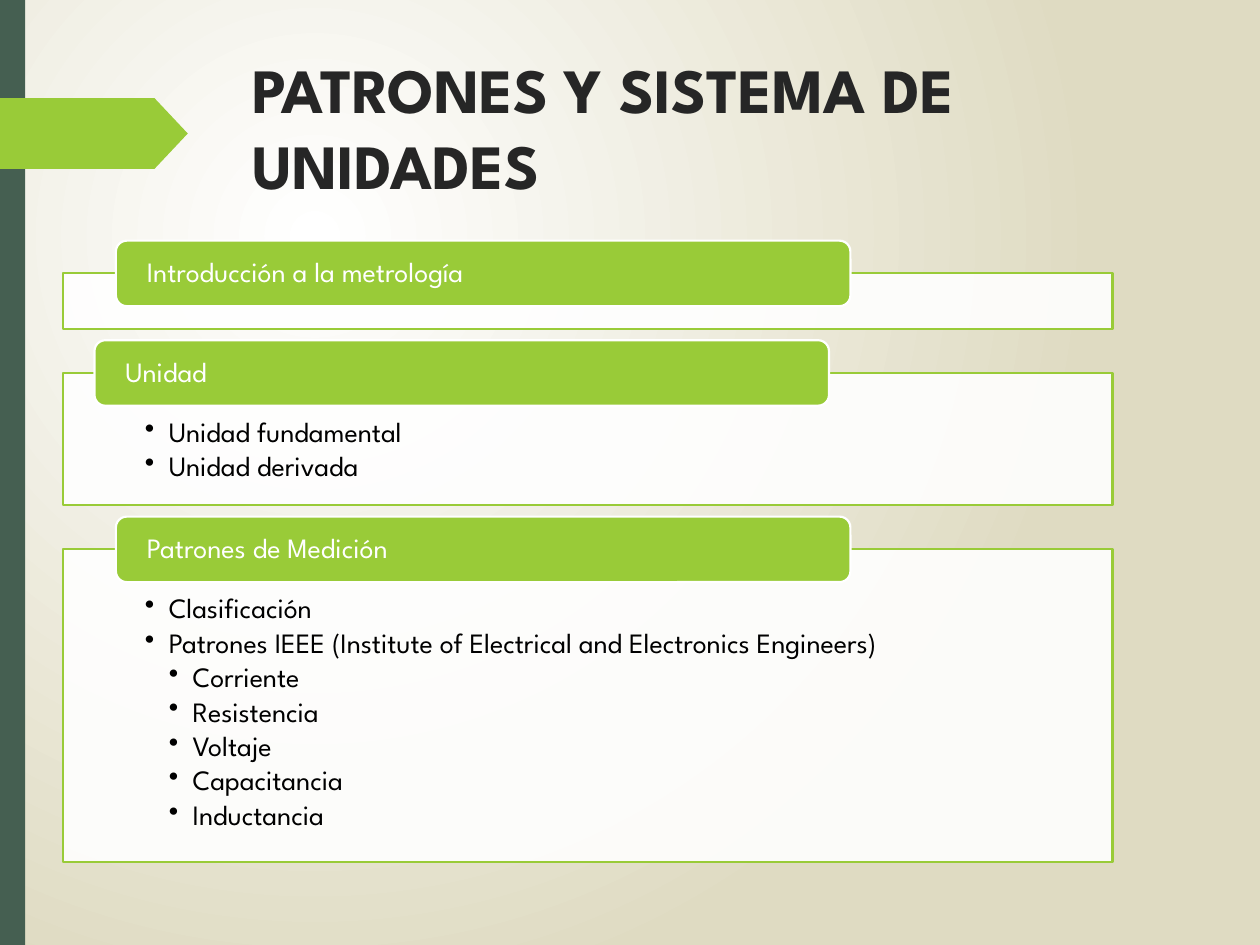
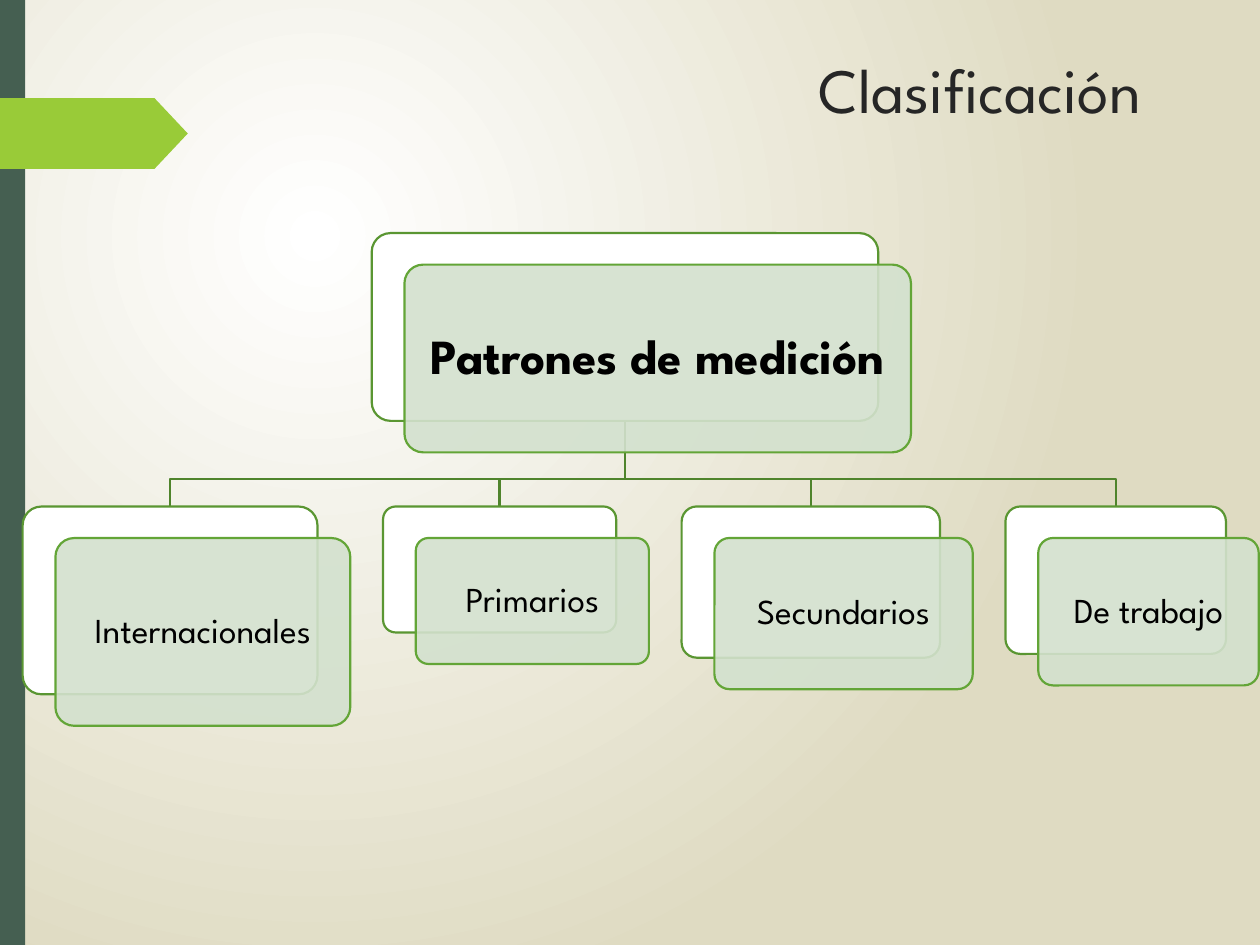
from pptx import Presentation
from pptx.dml.color import RGBColor
from pptx.enum.shapes import MSO_SHAPE as SHAPE
from pptx.enum.text import MSO_ANCHOR as ANCHOR, MSO_AUTO_SIZE as AUTO_SIZE, PP_ALIGN as ALIGN
from pptx.oxml.ns import qn
from pptx.util import Inches, Pt
from lxml import etree

FONT = "League Spartan"
LIME, DARK_GREEN, WHITE, BLACK = "99CB38", "455F51", "FFFFFF", "000000"


def paint(shape, fill=None, line=None, opacity=100):
    shape.shadow.inherit = False
    if fill:
        shape.fill.solid()
        shape.fill.fore_color.rgb = RGBColor.from_string(fill)
    else:
        shape.fill.background()
    if opacity < 100:
        tint = shape.element.spPr.find(qn("a:solidFill") + "/" + qn("a:srgbClr"))
        etree.SubElement(tint, qn("a:alpha")).set("val", str(opacity * 1000))
    if line:
        shape.line.color.rgb = RGBColor.from_string(line)
        shape.line.width = Pt(1.25)
    else:
        shape.line.fill.background()


def write(paragraph, text, size, color, align, bold=False, spacing=0.9):
    paragraph.text = text
    paragraph.alignment = align
    paragraph.line_spacing = spacing
    paragraph.font.name = FONT
    paragraph.font.size = Pt(size)
    paragraph.font.bold = bold
    paragraph.font.color.rgb = RGBColor.from_string(color)


prs = Presentation()
prs.slide_width, prs.slide_height = Inches(10), Inches(7.5)

backdrop = prs.slide_master.background.fill
backdrop.gradient()
for stop, (position, color) in zip(backdrop.gradient_stops, [(0, WHITE), (1, "DFDBC2")]):
    stop.position = position
    stop.color.rgb = RGBColor.from_string(color)
gradient = prs.slide_master.element.find(".//" + qn("p:bg") + "//" + qn("a:gradFill"))
gradient.remove(gradient.find(qn("a:lin")))
glow = etree.SubElement(gradient, qn("a:path"))
glow.set("path", "circle")
focus = etree.SubElement(glow, qn("a:fillToRect"))
for side, percent in [("l", 50), ("t", 50), ("r", 100), ("b", 100)]:
    focus.set(side, str(percent * 1000))

slides = []
for heading, left, align, bold in [
    ("PATRONES Y SISTEMA DE UNIDADES", 1.9, ALIGN.LEFT, True),
    ("Clasificación", 1.95, ALIGN.RIGHT, False),
]:
    slide = prs.slides.add_slide(prs.slide_layouts[5])
    slides.append(slide)
    side_band = slide.shapes.add_shape(SHAPE.RECTANGLE, 0, 0, Inches(0.2), prs.slide_height)
    paint(side_band, DARK_GREEN)
    pointer = slide.shapes.add_shape(SHAPE.PENTAGON, 0, Inches(0.78), Inches(1.49), Inches(0.56))
    pointer.adjustments[0] = 0.47
    paint(pointer, LIME)
    title = slide.shapes.title
    title.left, title.top, title.width, title.height = map(Inches, (left, 0.35, 7.21, 1.4))
    title.text_frame.auto_size = AUTO_SIZE.NONE
    title.text_frame.vertical_anchor = ANCHOR.TOP
    write(title.text_frame.paragraphs[0], heading, 36, "262626", align, bold, 1.0)

overview, classification = slides

topics = [
    ("Introducción a la metrología", 0.92, 0.44, []),
    ("Unidad", 0.75, 1.05, [("Unidad fundamental", 1), ("Unidad derivada", 1)]),
    ("Patrones de Medición", 0.92, 2.48, [
        ("Clasificación", 1),
        ("Patrones IEEE (Institute of Electrical and Electronics Engineers)", 1),
        ("Corriente", 2),
        ("Resistencia", 2),
        ("Voltaje", 2),
        ("Capacitancia", 2),
        ("Inductancia", 2),
    ]),
]
panel_top = 2.17
for topic, tab_left, panel_height, points in topics:
    panel = overview.shapes.add_shape(
        SHAPE.RECTANGLE, Inches(0.5), Inches(panel_top), Inches(8.33), Inches(panel_height))
    paint(panel, WHITE, LIME, 90)
    frame = panel.text_frame
    frame.vertical_anchor = ANCHOR.TOP
    frame.margin_left = frame.margin_right = Inches(0.65)
    frame.margin_top, frame.margin_bottom = Inches(0.36), Inches(0.12)
    for index, (point, level) in enumerate(points):
        paragraph = frame.add_paragraph() if index else frame.paragraphs[0]
        write(paragraph, point, 16, BLACK, ALIGN.LEFT)
        paragraph.level = level
        paragraph.space_after = Pt(2.4)
        properties = paragraph._p.get_or_add_pPr()
        properties.set("marL", str(Inches(0.19 * level)))
        properties.set("indent", str(Inches(-0.19)))
        bullet = etree.Element(qn("a:buChar"))
        bullet.set("char", "•")
        properties.find(qn("a:spcAft")).addnext(bullet)

    tab = overview.shapes.add_shape(
        SHAPE.ROUNDED_RECTANGLE, Inches(tab_left), Inches(panel_top - 0.26), Inches(5.83), Inches(0.52))
    paint(tab, LIME, WHITE)
    frame = tab.text_frame
    frame.vertical_anchor = ANCHOR.MIDDLE
    frame.margin_left = frame.margin_right = Inches(0.22)
    frame.margin_top = frame.margin_bottom = 0
    write(frame.paragraphs[0], topic, 16, WHITE, ALIGN.LEFT)
    panel_top += panel_height + 0.35

root_left, root_top, root_width, root_height = 2.95, 1.85, 4.02, 1.49
root_center, root_bottom = root_left + root_width / 2, root_top + root_height
branch_top, fork = 4.02, 3.8
cards = [("Patrones de medición", root_left, root_top, root_width, root_height, 28, True, 0.12)]
branch_left = 0.18
for kind, width, height in [
    ("Internacionales", 2.34, 1.49),
    ("Primarios", 1.85, 1),
    ("Secundarios", 2.05, 1.2),
    ("De trabajo", 1.75, 1.17),
]:
    cards.append((kind, branch_left, branch_top, width, height, 20, False, 0.08))
    branch_center = branch_left + width / 2
    route = [(root_center, fork), (branch_center, fork), (branch_center, branch_top)]
    builder = classification.shapes.build_freeform(Inches(root_center), Inches(root_bottom))
    builder.add_line_segments([(Inches(x), Inches(y)) for x, y in route], close=False)
    paint(builder.convert_to_shape(), line="4F842C")
    branch_left += width + 0.52

for label, left, top, width, height, size, bold, margin in cards:
    for shift_x, shift_y, fill, line, opacity in [
        (0, 0, WHITE, "5A9632", 100),
        (0.26, 0.25, "D3E1CE", "63A537", 90),
    ]:
        card = classification.shapes.add_shape(
            SHAPE.ROUNDED_RECTANGLE,
            Inches(left + shift_x), Inches(top + shift_y), Inches(width), Inches(height))
        card.adjustments[0] = 0.1
        paint(card, fill, line, opacity)
    frame = card.text_frame
    frame.vertical_anchor = ANCHOR.MIDDLE
    frame.margin_left = frame.margin_right = frame.margin_top = frame.margin_bottom = Inches(margin)
    write(frame.paragraphs[0], label, size, BLACK, ALIGN.CENTER, bold)

prs.save("out.pptx")
